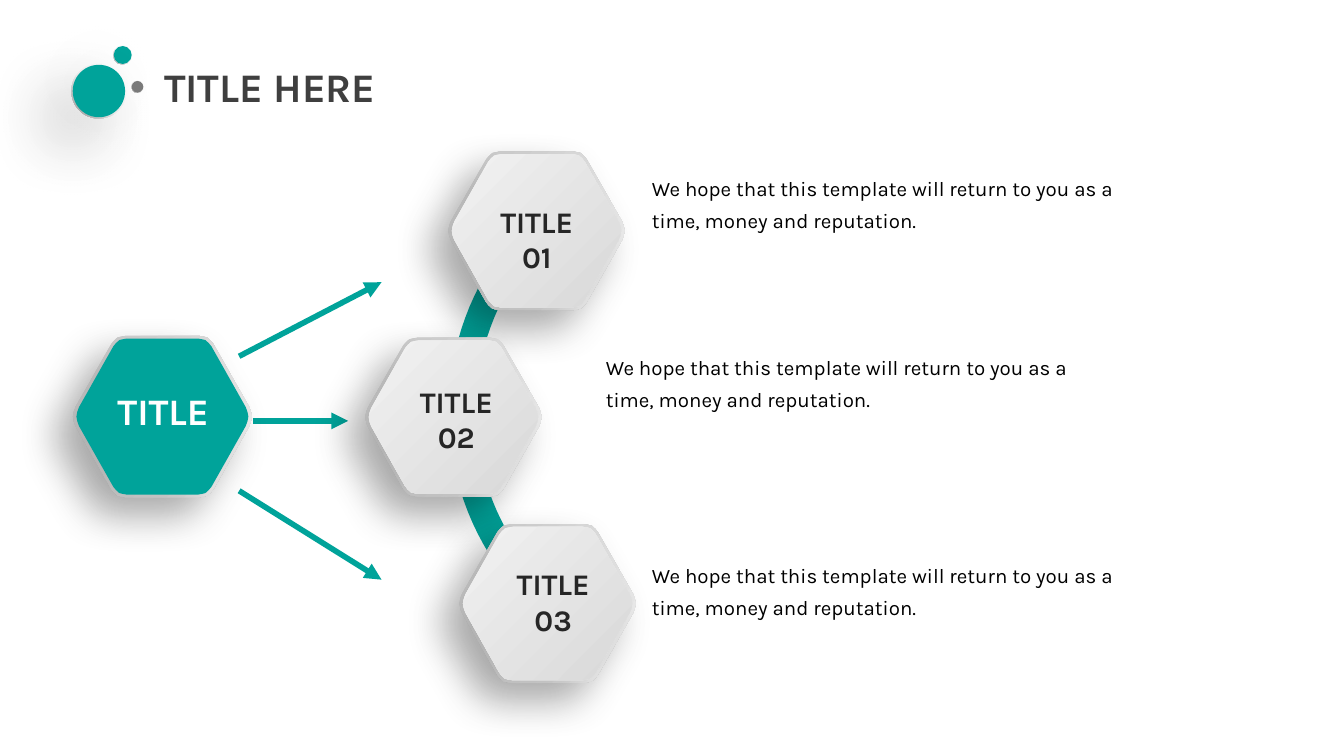
from dataclasses import dataclass
from math import cos, radians, sin

from lxml import etree
from pptx import Presentation
from pptx.dml.color import RGBColor
from pptx.enum.shapes import MSO_CONNECTOR, MSO_SHAPE
from pptx.enum.text import MSO_ANCHOR, MSO_AUTO_SIZE, PP_ALIGN
from pptx.oxml.ns import qn
from pptx.util import Cm, Pt

STRAIGHT = MSO_CONNECTOR.STRAIGHT
DONUT, OVAL = MSO_SHAPE.DONUT, MSO_SHAPE.OVAL
TOP, MIDDLE = MSO_ANCHOR.TOP, MSO_ANCHOR.MIDDLE
GROW, FIXED = MSO_AUTO_SIZE.SHAPE_TO_FIT_TEXT, MSO_AUTO_SIZE.NONE
LEFT, CENTER = PP_ALIGN.LEFT, PP_ALIGN.CENTER

FONT = "Karla"
COLORS = {"teal": "00A39A", "grey": "7B7B7B", "title": "3F3F3F",
          "label": "262626", "body": "000000", "white": "FFFFFF"}
RIM = [(0, "CACACA"), (100, "F2F2F2")]
FACE = [(0, "F2F2F2"), (100, "D8D8D8")]
RING = [(0, "FFFFFF"), (55, "F2F2F2"), (100, "A5A5A5")]
BODY = "We hope that this template will return to you as a time, money and reputation."

# One quarter of a hexagon with rounded corners, in half widths and half heights
QUARTER = [(1, 0), (0.99, 0.06), (0.97, 0.12), (0.57, 0.9),
           (0.54, 0.94), (0.5, 0.98), (0.46, 0.99), (0.41, 1)]


@dataclass
class Shadow:
    opacity: int  # per cent
    blur: float  # points
    distance: float  # points


@dataclass
class Dot:
    x: float
    y: float
    ring: float
    disc: float
    color: str


@dataclass
class Step:
    x: float
    y: float
    number: str
    label_at: tuple[float, float]
    body_at: tuple[float, float]


@dataclass
class Arrow:
    start: tuple[float, float]
    end: tuple[float, float]


HEX_SHADOW = Shadow(18, 22, 14)
DOT_SHADOW = Shadow(24, 35, 20)

DOTS = [Dot(2.32, 1.04, 0.36, 0.34, "teal"),
        Dot(2.6, 1.64, 0.23, 0.22, "grey"),
        Dot(1.87, 1.72, 1.04, 0.99, "teal")]
STEPS = [Step(10.14, 4.36, "01", (8.71, 3.84), (12.07, 3.05)),
         Step(8.57, 7.88, "02", (7.19, 7.24), (11.2, 6.43)),
         Step(10.35, 11.4, "03", (9.02, 10.69), (12.07, 10.36))]
ARROWS = [Arrow((4.52, 6.73), (7.21, 5.33)),
          Arrow((4.52, 9.27), (7.21, 10.95)),
          Arrow((4.78, 7.95), (6.58, 7.95))]


def rgb(name: str) -> RGBColor:
    return RGBColor.from_string(COLORS[name])


def paint(shape, color: str | list, angle: int = 315, shadow: Shadow | None = None) -> None:
    """Fill with a named colour or a list of gradient stops, without an outline."""
    shape.line.fill.background()
    shape.shadow.inherit = False
    if isinstance(color, str):
        shape.fill.solid()
        shape.fill.fore_color.rgb = rgb(color)
    else:
        shape.fill.gradient()
        shape.fill.gradient_angle = angle
        stops = next(shape.element.iter(qn("a:gsLst")))
        stops.clear()
        for position, value in color:
            stop = etree.SubElement(stops, qn("a:gs"), pos=str(position * 1000))
            etree.SubElement(stop, qn("a:srgbClr"), val=value)
    if shadow:
        effects = next(shape.element.iter(qn("a:effectLst")))
        outer = etree.SubElement(effects, qn("a:outerShdw"),
                                 blurRad=str(Pt(shadow.blur)), dist=str(Pt(shadow.distance)),
                                 dir=str(135 * 60000), rotWithShape="0")
        tint = etree.SubElement(outer, qn("a:srgbClr"), val="000000")
        etree.SubElement(tint, qn("a:alpha"), val=str(shadow.opacity * 1000))


def draw_outline(shapes, points: list[tuple[float, float]]):
    (first, *rest) = [(Cm(x), Cm(y)) for x, y in points]
    builder = shapes.build_freeform(*first)
    builder.add_line_segments(rest, close=True)
    return builder.convert_to_shape()


def draw_hexagon(shapes, x: float, y: float, width: float, height: float, color: str | list) -> None:
    half = QUARTER + [(-u, v) for u, v in reversed(QUARTER)]
    around = half + [(u, -v) for u, v in reversed(half[1:-1])]
    points = [(x + u * width / 2, y + v * height / 2) for u, v in around]
    paint(draw_outline(shapes, points), color, shadow=HEX_SHADOW)


def draw_arc(shapes, x: float, y: float, inner: float, outer: float) -> None:
    angles = [radians(121.3 + 118.3 * i / 48) for i in range(49)]
    points = [(x + radius * cos(a), y + radius * sin(a))
              for radius, sweep in ((outer, angles), (inner, angles[::-1])) for a in sweep]
    paint(draw_outline(shapes, points), "teal")


def draw_dot(shapes, dot: Dot) -> None:
    for kind, size, color in ((DONUT, dot.ring, RING), (OVAL, dot.disc, dot.color)):
        disc = shapes.add_shape(kind, Cm(dot.x - size / 2), Cm(dot.y - size / 2), Cm(size), Cm(size))
        if kind == DONUT:
            disc.adjustments[0] = 0.05
        paint(disc, color, angle=225, shadow=DOT_SHADOW)


def draw_arrow(shapes, arrow: Arrow) -> None:
    ends = [Cm(v) for v in (*arrow.start, *arrow.end)]
    connector = shapes.add_connector(STRAIGHT, *ends)
    connector.line.color.rgb = rgb("teal")
    connector.line.width = Pt(3)
    etree.SubElement(connector.line._get_or_add_ln(), qn("a:tailEnd"), type="triangle")
    etree.SubElement(connector.element.spPr, qn("a:effectLst"))


def write(frame, lines: list[str], size: float, color: str, bold: bool = True, align=CENTER,
          spacing: float = 1.0, inset: tuple[float, float] = (0, 0), anchor=TOP, fit=GROW) -> None:
    side, edge = (Cm(v) for v in inset)
    frame_format = {"word_wrap": True, "auto_size": fit, "vertical_anchor": anchor,
                    "margin_left": side, "margin_right": side,
                    "margin_top": edge, "margin_bottom": edge}
    for name, value in frame_format.items():
        setattr(frame, name, value)
    frame.text = "\n".join(lines)
    for paragraph in frame.paragraphs:
        paragraph.alignment = align
        paragraph.line_spacing = spacing
        font = paragraph.runs[0].font
        for name, value in {"name": FONT, "size": Pt(size), "bold": bold}.items():
            setattr(font, name, value)
        font.color.rgb = rgb(color)


def add_text(shapes, at: tuple[float, float], width: float, height: float, lines: list[str],
             size: float, color: str, **options) -> None:
    box = shapes.add_textbox(Cm(at[0]), Cm(at[1]), Cm(width), Cm(height))
    write(box.text_frame, lines, size, color, **options)


def main() -> None:
    deck = Presentation()
    deck.slide_width, deck.slide_height = Cm(25.4), Cm(14.28)
    slide = deck.slides.add_slide(deck.slide_layouts[5])
    shapes = slide.shapes

    # Heading with its dots
    heading = shapes.title
    place = {"left": 2.92, "top": 1.07, "width": 8.61, "height": 1.12}
    for name, value in place.items():
        setattr(heading, name, Cm(value))
    write(heading.text_frame, ["TITLE HERE"], 21.7, "title", align=LEFT,
          inset=(0.18, 0.1), anchor=MIDDLE, fit=FIXED)
    for dot in DOTS:
        draw_dot(shapes, dot)

    # Arc behind the steps, and arrows towards them
    draw_arc(shapes, 13.61, 7.77, 4.62, 5.13)
    for arrow in ARROWS:
        draw_arrow(shapes, arrow)

    # Main topic
    draw_hexagon(shapes, 3.07, 7.87, 3.38, 3.05, RIM)
    draw_hexagon(shapes, 3.07, 7.87, 3.25, 2.95, "teal")
    add_text(shapes, (1.65, 7.34), 2.87, 0.86, ["TITLE"], 20, "white")

    # Steps with their descriptions
    for step in STEPS:
        draw_hexagon(shapes, step.x, step.y, 3.33, 3, RIM)
        draw_hexagon(shapes, step.x, step.y, 3.2, 2.9, FACE)
        add_text(shapes, step.label_at, 2.87, 1.37, ["TITLE", step.number], 16, "label")
        add_text(shapes, step.body_at, 10.08, 1.47, [BODY], 11, "body", bold=False,
                 align=LEFT, spacing=1.3, inset=(0.25, 0.13))

    deck.save("out.pptx")


if __name__ == "__main__":
    main()
